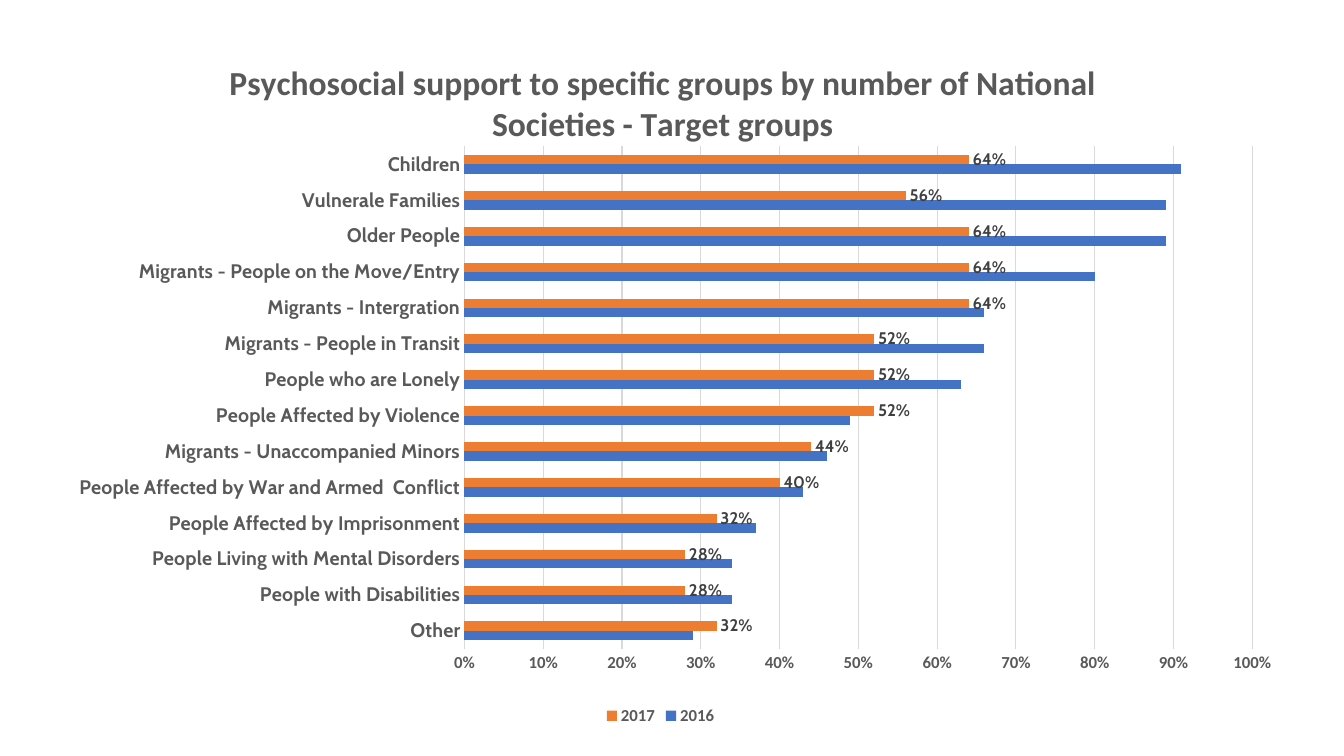
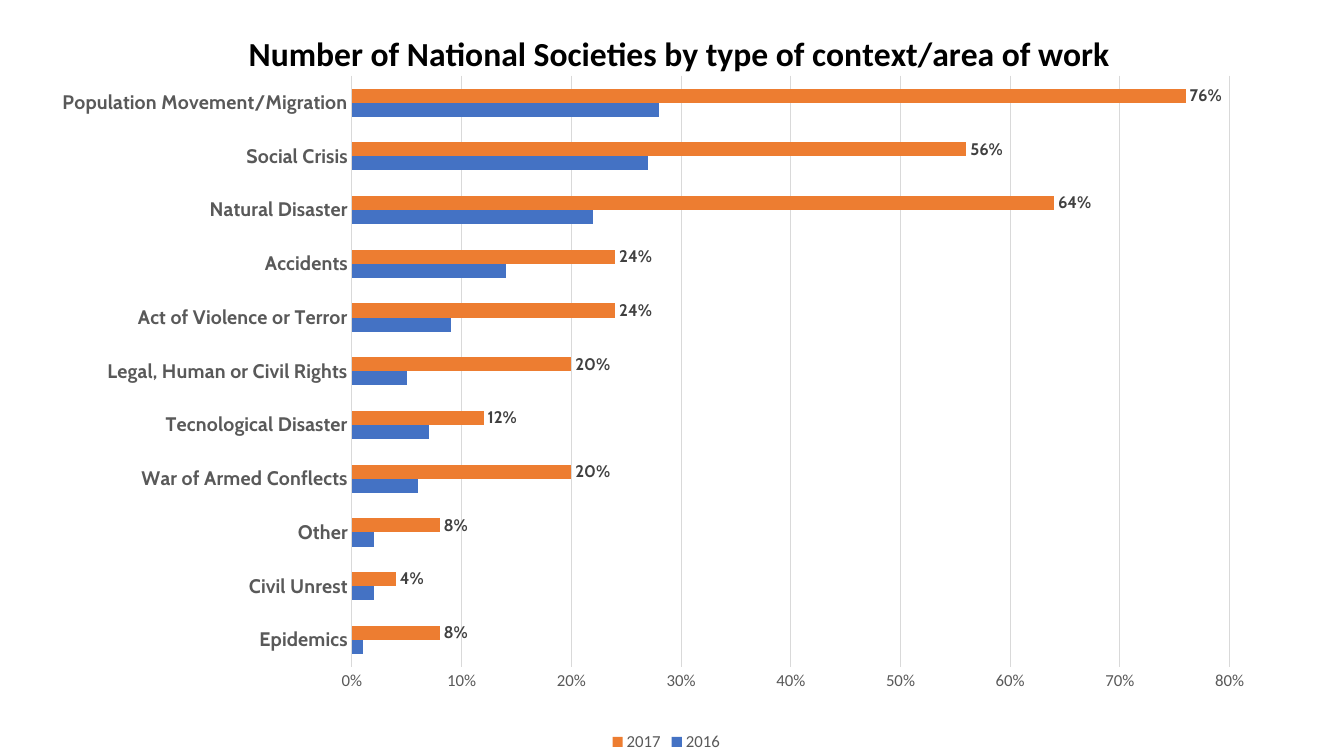
import dataclasses

import lxml.etree
import pptx
import pptx.chart.data
import pptx.dml.color
import pptx.enum.chart
import pptx.oxml.ns
import pptx.util

Cm = pptx.util.Cm
Pt = pptx.util.Pt
qn = pptx.oxml.ns.qn

COLOURS = {
    "2016": "4472C4",
    "2017": "ED7D31",
    "grid": "D9D9D9",
    "text": "595959",
    "label": "404040",
    "black": "000000",
}
HEADING_FONT = "Calibri"
LABEL_FONT = "Cabin"
PERCENT = "0%"


@dataclasses.dataclass
class Row:
    category: str
    share_2016: float
    share_2017: float


@dataclasses.dataclass
class BarPage:
    title: str
    title_colour: str
    title_at: tuple[float, float]
    frame: tuple[float, float, float, float]
    plot: tuple[float, float, float, float]
    axis_maximum: float
    bold: bool
    rows: list[Row]


PAGES = [
    BarPage(
        title="Psychosocial support to specific groups by number of National Societies - Target groups",
        title_colour="text",
        title_at=(0.15, 0.04),
        frame=(0.91, 0.66, 31.47, 17.73),
        plot=(0.343, 0.171, 0.631, 0.714),
        axis_maximum=1.0,
        bold=True,
        rows=[
            Row("Other", 0.29, 0.32),
            Row("People with Disabilities", 0.34, 0.28),
            Row("People Living with Mental Disorders", 0.34, 0.28),
            Row("People Affected by Imprisonment", 0.37, 0.32),
            Row("People Affected by War and Armed  Conflict", 0.43, 0.40),
            Row("Migrants - Unaccompanied Minors", 0.46, 0.44),
            Row("People Affected by Violence", 0.49, 0.52),
            Row("People who are Lonely", 0.63, 0.52),
            Row("Migrants - People in Transit", 0.66, 0.52),
            Row("Migrants - Intergration", 0.66, 0.64),
            Row("Migrants - People on the Move/Entry", 0.80, 0.64),
            Row("Older People", 0.89, 0.64),
            Row("Vulnerale Families", 0.89, 0.56),
            Row("Children", 0.91, 0.64),
        ],
    ),
    BarPage(
        title="Number of National Societies by type of context/area of work",
        title_colour="black",
        title_at=(0.155, 0.015),
        frame=(1.32, 0.36, 30.94, 18.69),
        plot=(0.244, 0.083, 0.715, 0.797),
        axis_maximum=0.8,
        bold=False,
        rows=[
            Row("Epidemics", 0.01, 0.08),
            Row("Civil Unrest", 0.02, 0.04),
            Row("Other", 0.02, 0.08),
            Row("War of Armed Conflects", 0.06, 0.20),
            Row("Tecnological Disaster", 0.07, 0.12),
            Row("Legal, Human or Civil Rights", 0.05, 0.20),
            Row("Act of Violence or Terror", 0.09, 0.24),
            Row("Accidents", 0.14, 0.24),
            Row("Natural Disaster", 0.22, 0.64),
            Row("Social Crisis", 0.27, 0.56),
            Row("Population Movement/Migration", 0.28, 0.76),
        ],
    ),
]


def colour(name: str) -> pptx.dml.color.RGBColor:
    return pptx.dml.color.RGBColor.from_string(COLOURS[name])


def style_font(font, name: str, size: int, colour_name: str, bold: bool) -> None:
    font.name = name
    font.size = Pt(size)
    font.bold = bold
    font.color.rgb = colour(colour_name)


def style_line(line) -> None:
    line.color.rgb = colour("grid")
    line.width = Pt(0.75)


def place(parent, index: int, settings: dict[str, object]) -> None:
    for existing in parent.findall(qn("c:layout")):
        parent.remove(existing)
    layout = lxml.etree.Element(qn("c:layout"))
    manual = lxml.etree.SubElement(layout, qn("c:manualLayout"))
    for tag, value in settings.items():
        lxml.etree.SubElement(manual, qn(f"c:{tag}")).set("val", str(value))
    parent.insert(index, layout)


def add_title(chart, page: BarPage) -> None:
    chart.has_title = True
    title = chart.chart_title
    title.include_in_layout = False
    para = title.text_frame.paragraphs[0]
    para.text = page.title
    style_font(para.font, HEADING_FONT, 24, page.title_colour, True)
    left, top = page.title_at
    place(title._element, 1, {"xMode": "edge", "yMode": "edge", "x": left, "y": top})


def style_axes(chart, page: BarPage) -> None:
    for axis in (chart.category_axis, chart.value_axis):
        axis.major_tick_mark = pptx.enum.chart.XL_TICK_MARK.NONE
        axis.minor_tick_mark = pptx.enum.chart.XL_TICK_MARK.NONE
    categories, values = chart.category_axis, chart.value_axis
    style_font(categories.tick_labels.font, LABEL_FONT, 14, "text", True)
    style_line(categories.format.line)
    style_font(values.tick_labels.font, HEADING_FONT, 12, "text", page.bold)
    values.tick_labels.number_format = PERCENT
    values.tick_labels.number_format_is_linked = False
    values.minimum_scale = 0
    values.maximum_scale = page.axis_maximum
    values.major_unit = 0.1
    values.format.line.fill.background()
    values.has_major_gridlines = True
    style_line(values.major_gridlines.format.line)


def style_bars(plot) -> None:
    plot.gap_width = 182
    plot.overlap = 0
    plot.vary_by_categories = False
    for series in plot.series:
        series.format.fill.solid()
        series.format.fill.fore_color.rgb = colour(series.name)
        series.invert_if_negative = False
    labels = plot.series[1].data_labels
    labels.show_value = True
    labels.number_format = PERCENT
    labels.number_format_is_linked = False
    labels.position = pptx.enum.chart.XL_LABEL_POSITION.OUTSIDE_END
    style_font(labels.font, LABEL_FONT, 12, "label", True)


def add_bar_page(deck, page: BarPage) -> None:
    slide = deck.slides.add_slide(deck.slide_layouts[6])
    data = pptx.chart.data.CategoryChartData(number_format=PERCENT)
    data.categories = [row.category for row in page.rows]
    data.add_series("2016", [row.share_2016 for row in page.rows])
    data.add_series("2017", [row.share_2017 for row in page.rows])
    kind = pptx.enum.chart.XL_CHART_TYPE.BAR_CLUSTERED
    frame = slide.shapes.add_chart(kind, *map(Cm, page.frame), data)
    chart = frame.chart
    style_font(chart.font, HEADING_FONT, 10, "black", page.bold)
    add_title(chart, page)
    style_axes(chart, page)
    style_bars(chart.plots[0])
    chart.has_legend = True
    chart.legend.position = pptx.enum.chart.XL_LEGEND_POSITION.BOTTOM
    chart.legend.include_in_layout = False
    style_font(chart.legend.font, HEADING_FONT, 12, "text", page.bold)
    plot_area = chart._chartSpace.chart.plotArea
    sizes = dict(zip(("x", "y", "w", "h"), page.plot))
    place(plot_area, 0, {"layoutTarget": "inner", "xMode": "edge", "yMode": "edge", **sizes})


def main() -> None:
    deck = pptx.Presentation()
    deck.slide_width = Cm(33.87)
    deck.slide_height = Cm(19.05)
    for page in PAGES:
        add_bar_page(deck, page)
    deck.save("out.pptx")


if __name__ == "__main__":
    main()
